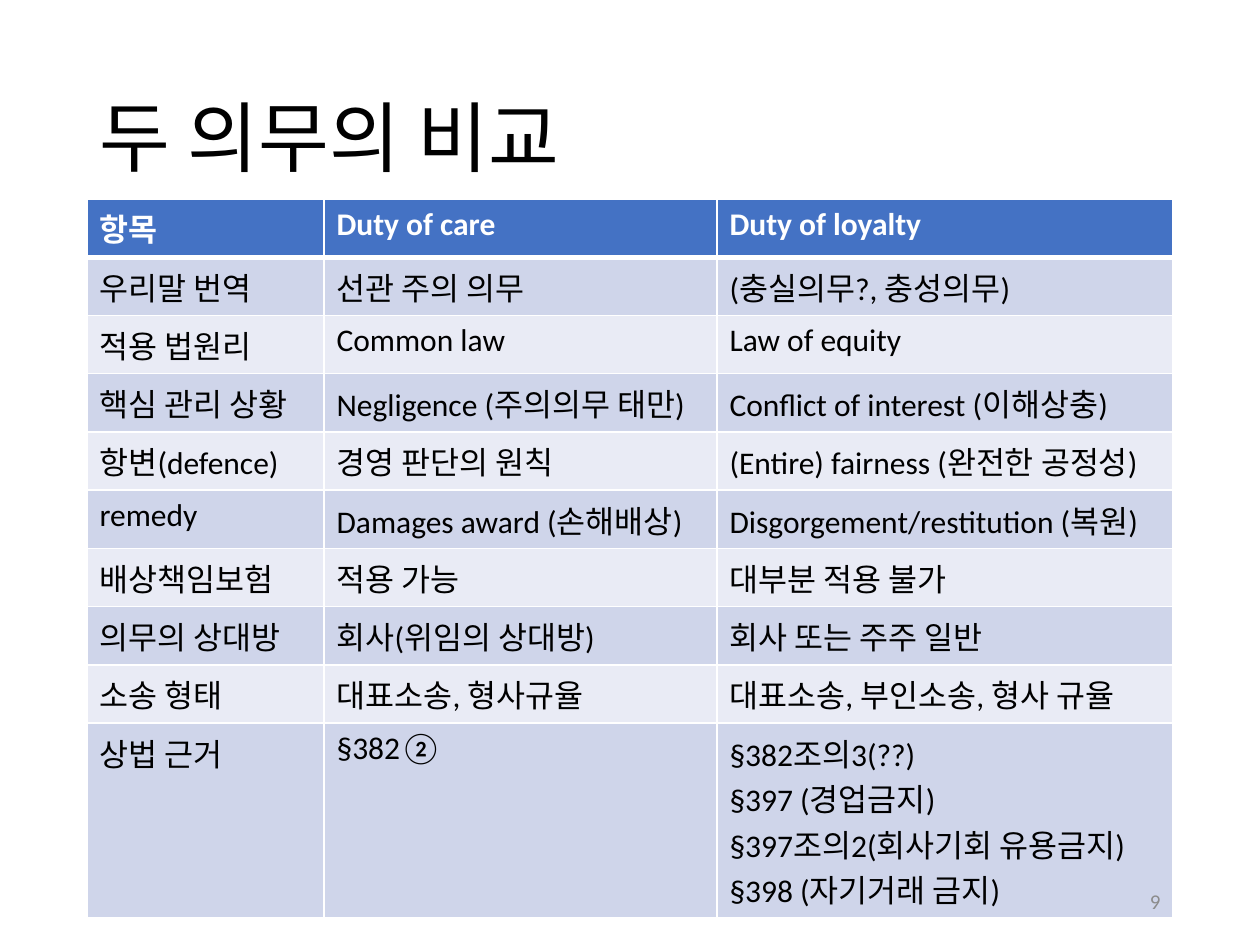
from dataclasses import dataclass

from lxml.etree import SubElement
from pptx import Presentation
from pptx.dml.color import RGBColor
from pptx.enum.text import MSO_ANCHOR as Anchor, MSO_AUTO_SIZE as AutoSize, PP_ALIGN as Align
from pptx.oxml.ns import qn
from pptx.util import Emu, Pt

EMU_PER_PX = 914400 / 126
FONT = "Calibri"
BLACK, WHITE, GREY = "000000", "FFFFFF", "8C8C8C"
HEADER_FILL, BAND_FILLS = "4472C4", ("CFD5EA", "E9EBF5")
COLUMN_WIDTHS = (237, 393, 456)
ROW_HEIGHT = 52


@dataclass(frozen=True)
class Box:
    """A rectangle in px."""
    left: int
    top: int
    width: int
    height: int

    def emu(self) -> tuple[Emu, ...]:
        """Return left, top, width and height in EMU."""
        return tuple(map(px, (self.left, self.top, self.width, self.height)))


@dataclass(frozen=True)
class TextStyle:
    """The look of a run."""
    size: int
    color: str = BLACK
    bold: bool = False


@dataclass(frozen=True)
class Comparison:
    """One table row comparing the two duties."""
    item: str
    care: str
    loyalty: tuple[str, ...]

    def cells(self) -> tuple[tuple[str, ...], ...]:
        """Return the lines of each cell."""
        return (self.item,), (self.care,), self.loyalty


COMPARISONS = (
    Comparison("항목", "Duty of care", ("Duty of loyalty",)),
    Comparison("우리말 번역", "선관 주의 의무", ("(충실의무?, 충성의무)",)),
    Comparison("적용 법원리", "Common law", ("Law of equity",)),
    Comparison("핵심 관리 상황", "Negligence (주의의무 태만)", ("Conflict of interest (이해상충)",)),
    Comparison("항변(defence)", "경영 판단의 원칙", ("(Entire) fairness (완전한 공정성)",)),
    Comparison("remedy", "Damages award (손해배상)", ("Disgorgement/restitution (복원)",)),
    Comparison("배상책임보험", "적용 가능", ("대부분 적용 불가",)),
    Comparison("의무의 상대방", "회사(위임의 상대방)", ("회사 또는 주주 일반",)),
    Comparison("소송 형태", "대표소송, 형사규율", ("대표소송, 부인소송, 형사 규율",)),
    Comparison("상법 근거", "§382②", (
        "§382조의3(??)",
        "§397 (경업금지)",
        "§397조의2(회사기회 유용금지)",
        "§398 (자기거래 금지)",
    )),
)


def px(length: int) -> Emu:
    """Turn px into EMU."""
    return Emu(round(length * EMU_PER_PX))


def rgb(color: str) -> RGBColor:
    """Turn a hex string into a colour."""
    return RGBColor.from_string(color)


def write(frame, lines: tuple[str, ...], style: TextStyle, align=Align.LEFT) -> None:
    """Write one paragraph per line."""
    for index, line in enumerate(lines):
        paragraph = frame.add_paragraph() if index else frame.paragraphs[0]
        paragraph.alignment = align
        run = paragraph.add_run()
        run.text = line
        run.font.name = FONT
        run.font.size = Pt(style.size)
        run.font.bold = style.bold
        run.font.color.rgb = rgb(style.color)


def add_border(cell, side: str, width: int) -> None:
    """Add a white border to one side of a cell."""
    line = SubElement(cell._tc.get_or_add_tcPr(), qn(f"a:ln{side}"), w=str(Pt(width)))
    SubElement(SubElement(line, qn("a:solidFill")), qn("a:srgbClr"), val=WHITE)


def add_title(slide, title: str, box: Box) -> None:
    """Fill the title placeholder."""
    heading = slide.shapes.title
    heading.left, heading.top, heading.width, heading.height = box.emu()
    frame = heading.text_frame
    frame.auto_size = AutoSize.NONE
    frame.vertical_anchor = Anchor.MIDDLE
    write(frame, (title,), TextStyle(44))
    frame.paragraphs[0].line_spacing = 0.9


def add_comparison_table(slide, box: Box) -> None:
    """Draw the banded comparison table."""
    table = slide.shapes.add_table(len(COMPARISONS), len(COLUMN_WIDTHS), *box.emu()).table
    for column, width in zip(table.columns, COLUMN_WIDTHS):
        column.width = px(width)
    for index, (row, comparison) in enumerate(zip(table.rows, COMPARISONS)):
        row.height = px(ROW_HEIGHT)
        header = index == 0
        style = TextStyle(18, WHITE if header else BLACK, header)
        fill = HEADER_FILL if header else BAND_FILLS[(index - 1) % 2]
        for cell, lines in zip(row.cells, comparison.cells()):
            write(cell.text_frame, lines, style)
            for side in "LRTB":
                thick = (header and side == "B") or (index == 1 and side == "T")
                add_border(cell, side, 3 if thick else 1)
            cell.fill.solid()
            cell.fill.fore_color.rgb = rgb(fill)


def add_page_number(slide, number: str, box: Box) -> None:
    """Write the page number at the lower right."""
    frame = slide.shapes.add_textbox(*box.emu()).text_frame
    frame.word_wrap = True
    frame.vertical_anchor = Anchor.MIDDLE
    write(frame, (number,), TextStyle(12, GREY), Align.RIGHT)


def main() -> None:
    """Build and save the slide."""
    presentation = Presentation()
    presentation.slide_width, presentation.slide_height = px(1260), px(945)
    slide = presentation.slides.add_slide(presentation.slide_layouts.get_by_name("Title Only"))
    add_title(slide, "두 의무의 비교", Box(87, 50, 1086, 183))
    add_comparison_table(slide, Box(87, 199, sum(COLUMN_WIDTHS), ROW_HEIGHT * len(COMPARISONS)))
    add_page_number(slide, "9", Box(890, 876, 283, 50))
    presentation.save("out.pptx")


if __name__ == "__main__":
    main()
